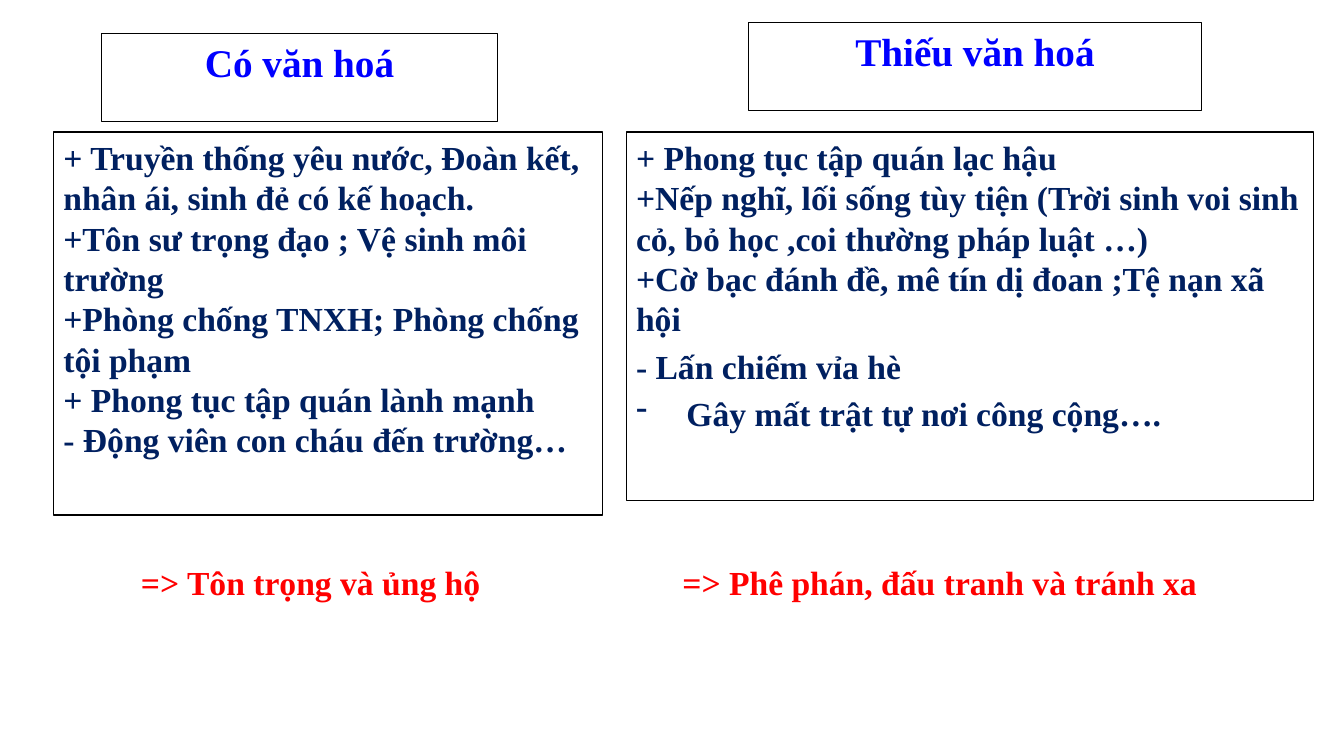
import pptx
import pptx.dml.color
import pptx.enum.shapes
import pptx.enum.text
import pptx.oxml.ns
import pptx.util
from lxml import etree

PX = 9144  # EMU per px, 100 px to the inch
THEME = {
    "font": "Times New Roman",
    "heading": {"size": 28, "color": "0000FF"},
    "body": {"size": 24, "color": "002060"},
    "conclusion": {"size": 24, "color": "FF0000"},
    "border": "000000",
}
ALIGN = pptx.enum.text.PP_ALIGN


def add_text(page, at, lines, size, color, align=ALIGN.LEFT, border=False):
    """Add a text area; each line is a string or (string, paragraph format)."""
    place = [value * PX for value in at]
    if border:
        box = page.shapes.add_shape(pptx.enum.shapes.MSO_SHAPE.RECTANGLE, *place)
        box.shadow.inherit = False
        box.fill.background()
        box.line.color.rgb = pptx.dml.color.RGBColor.from_string(THEME["border"])
        box.line.width = pptx.util.Pt(0.75)
    else:
        box = page.shapes.add_textbox(*place)
    frame = box.text_frame
    frame.word_wrap = True
    frame.vertical_anchor = pptx.enum.text.MSO_ANCHOR.TOP
    for index, line in enumerate(lines):
        text, style = (line, {}) if isinstance(line, str) else line
        para = frame.add_paragraph() if index else frame.paragraphs[0]
        para.alignment = style.get("align", align)
        if "before" in style:
            para.space_before = pptx.util.Pt(style["before"])
        if "bullet" in style:
            properties = para._p.get_or_add_pPr()
            properties.set("marL", str(50 * PX))
            properties.set("indent", str(-50 * PX))
            etree.SubElement(properties, pptx.oxml.ns.qn("a:buFontTx"))
            bullet = etree.SubElement(properties, pptx.oxml.ns.qn("a:buChar"))
            bullet.set("char", style["bullet"])
        span = para.add_run()
        span.text = text
        span.font.name = THEME["font"]
        span.font.size = pptx.util.Pt(size)
        span.font.bold = True
        span.font.color.rgb = pptx.dml.color.RGBColor.from_string(color)


deck = pptx.Presentation()
deck.slide_width, deck.slide_height = 1333 * PX, 750 * PX
page = deck.slides.add_slide(deck.slide_layouts[6])

# Column headings
for at, heading in [
    ((101, 33, 392, 88), "Có văn hoá"),
    ((742, 22, 450, 88), "Thiếu văn hoá"),
]:
    add_text(page, at, [heading], **THEME["heading"], align=ALIGN.CENTER, border=True)

# Lists of examples
spaced = {"align": ALIGN.JUSTIFY, "before": 5}
cultured = [
    "+ Truyền thống yêu nước, Đoàn kết, nhân ái, sinh đẻ có kế hoạch.",
    "+Tôn sư trọng đạo ; Vệ sinh môi trường",
    "+Phòng chống TNXH; Phòng chống tội phạm",
    "+ Phong tục tập quán lành mạnh",
    "- Động viên con cháu đến trường…",
]
uncultured = [
    "+ Phong tục tập quán lạc hậu",
    "+Nếp nghĩ, lối sống tùy tiện (Trời sinh voi sinh cỏ, bỏ học ,coi thường pháp luật …)",
    "+Cờ bạc đánh đề, mê tín dị đoan ;Tệ nạn xã hội",
    ("- Lấn chiếm vỉa hè", spaced),
    ("Gây mất trật tự nơi công cộng….", {**spaced, "bullet": "-"}),
]
for at, examples in [((53, 131, 545, 380), cultured), ((621, 131, 682, 366), uncultured)]:
    add_text(page, at, examples, **THEME["body"], border=True)

# Conclusions
for at, conclusion in [
    ((130, 553, 392, 50), "=> Tôn trọng và ủng hộ"),
    ((667, 553, 600, 50), "=> Phê phán, đấu tranh và tránh xa"),
]:
    add_text(page, at, [conclusion], **THEME["conclusion"])

deck.save("out.pptx")
